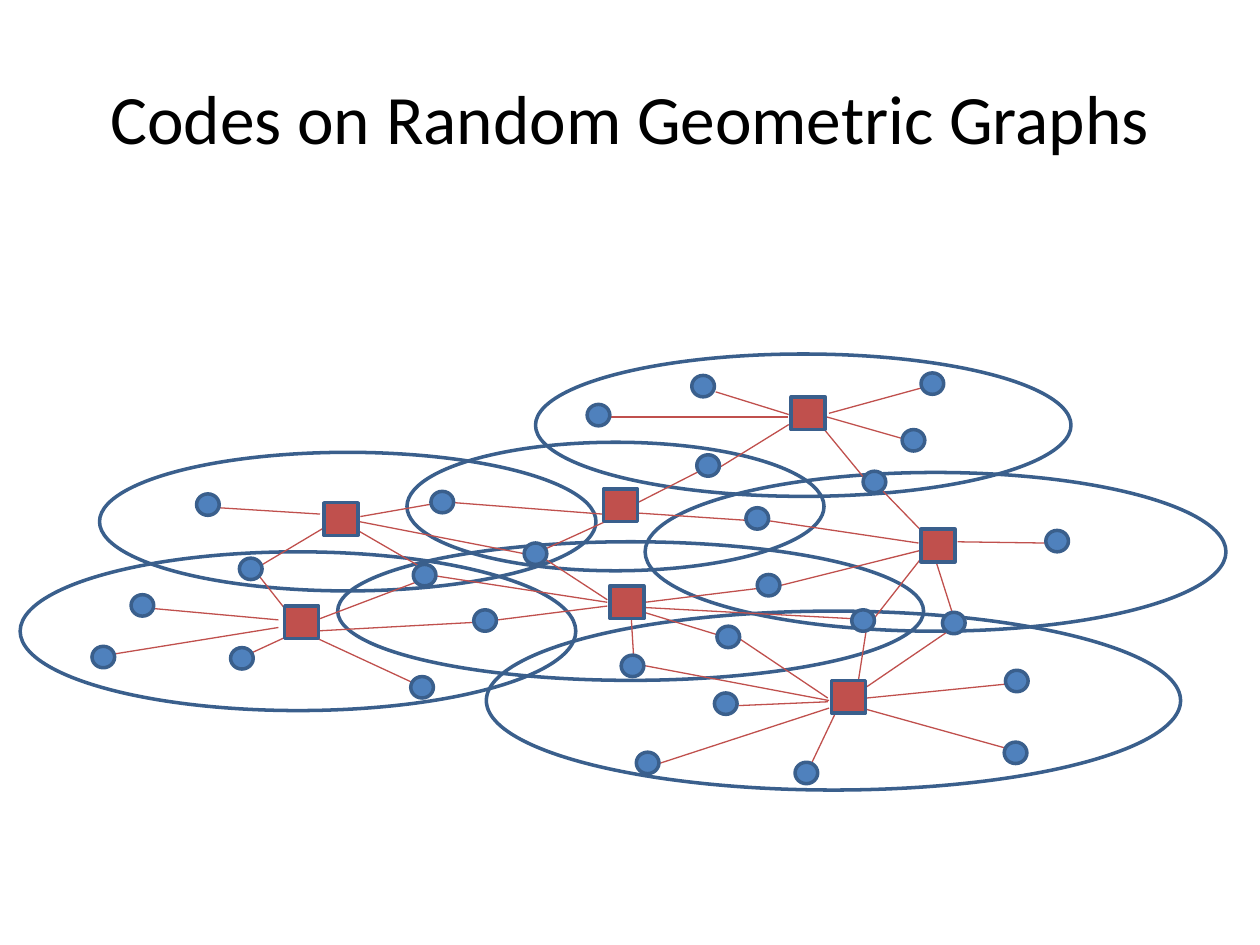
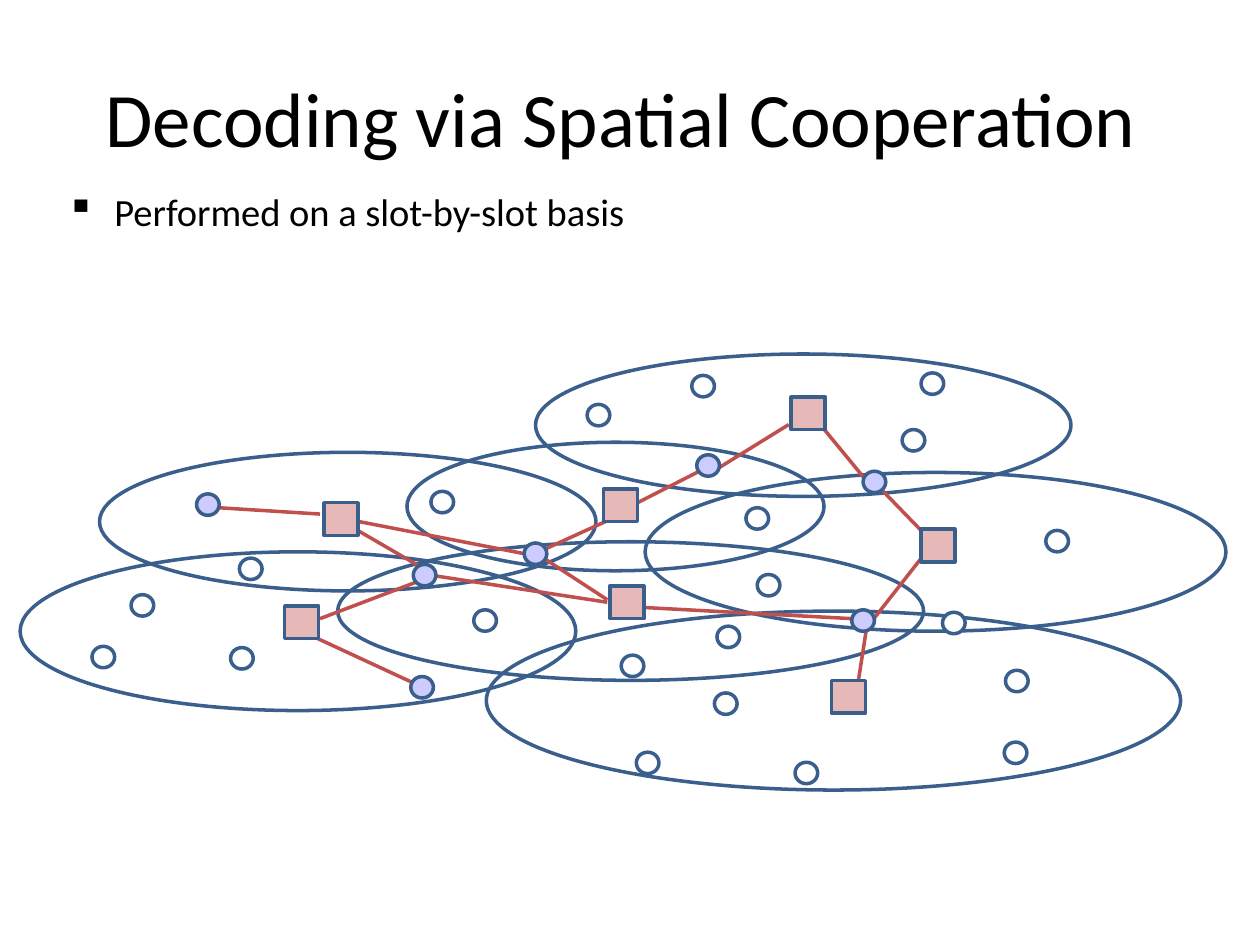
import pptx
import pptx.util
import pptx.dml.color
import pptx.enum.shapes
import pptx.enum.text
from lxml import etree
from pptx.oxml.ns import qn
from pptx.util import Inches, Pt

RGBColor = pptx.dml.color.RGBColor
MSO_SHAPE = pptx.enum.shapes.MSO_SHAPE

# Shared look
BLACK = RGBColor(0x00, 0x00, 0x00)
WHITE = RGBColor(0xFF, 0xFF, 0xFF)
OUTLINE = RGBColor(0x3A, 0x5F, 0x8C)
RED = RGBColor(0xC0, 0x50, 0x4D)
PALE_RED = RGBColor(0xE6, 0xB9, 0xB8)
BLUE = RGBColor(0x4F, 0x81, 0xBD)
LILAC = RGBColor(0xCC, 0xCC, 0xFF)
FONT = "Calibri"
THICK, THIN = 2, 0.75

# Coverage regions: left, top, width, height
REGIONS = [
    (0.79, 3.59, 3.94, 1.1), (2.68, 4.3, 4.65, 1.1), (3.23, 3.51, 3.31, 1.02),
    (5.12, 3.75, 4.61, 1.26), (0.16, 4.38, 4.41, 1.26), (4.25, 2.81, 4.25, 1.13),
    (3.86, 4.85, 5.51, 1.42),
]

# Stations (squares) and users (dots): left, top
STATION_SIZE = (0.27, 0.26)
STATIONS = [
    (2.26, 4.81), (2.57, 3.99), (4.79, 3.88), (6.28, 3.15),
    (7.31, 4.2), (6.6, 5.4), (4.84, 4.65),
]
USER_SIZE = (0.18, 0.17)
COOPERATING_USERS = [
    (6.85, 3.74), (5.53, 3.61), (4.16, 4.31), (3.28, 4.48),
    (6.76, 4.84), (3.26, 5.37), (1.56, 3.92),
]
OTHER_USERS = [
    (5.49, 2.98), (7.31, 2.96), (7.16, 3.41), (8.3, 4.21), (5.92, 4.03),
    (4.66, 3.21), (3.42, 3.9), (3.76, 4.84), (6.01, 4.56), (7.48, 4.86),
    (7.98, 5.32), (7.97, 5.89), (6.31, 6.05), (5.05, 5.97), (5.67, 5.5),
    (4.93, 5.2), (5.69, 4.97), (1.83, 5.14), (0.73, 5.13), (1.9, 4.43),
    (1.04, 4.72),
]

# Links between users and stations: x1, y1, x2, y2
COOPERATION_LINKS = [
    (2.46, 5.04, 3.28, 5.42), (2.54, 4.91, 3.33, 4.61), (1.74, 4.03, 2.54, 4.08),
    (2.77, 4.17, 3.34, 4.5), (2.8, 4.13, 4.19, 4.4), (4.3, 4.37, 4.87, 4.11),
    (5.06, 3.99, 5.57, 3.73), (5.71, 3.71, 6.26, 3.37), (6.88, 3.82, 6.51, 3.37),
    (7.32, 4.22, 7, 3.89), (7.32, 4.42, 6.92, 4.93), (4.33, 4.44, 4.82, 4.76),
    (6.76, 4.91, 5.08, 4.82), (3.45, 4.57, 4.82, 4.78), (6.88, 4.97, 6.81, 5.42),
]
OTHER_LINKS = [
    (2, 5.18, 2.26, 5.06), (0.91, 5.19, 2.21, 4.98), (1.22, 4.83, 2.21, 4.92),
    (2.04, 4.55, 2.26, 4.83), (2.47, 5.01, 3.76, 4.94), (2.05, 4.5, 2.57, 4.19),
    (2.86, 4.1, 3.43, 4), (3.61, 3.99, 4.78, 4.08), (5.03, 4.07, 5.93, 4.13),
    (4.83, 3.31, 6.25, 3.31), (5.68, 3.11, 6.26, 3.29), (7.16, 3.48, 6.53, 3.3),
    (8.3, 4.31, 7.6, 4.3), (7.43, 4.46, 7.57, 4.9), (7.3, 4.37, 6.18, 4.65),
    (7.29, 4.31, 6.08, 4.13), (3.95, 4.92, 4.82, 4.81), (5.08, 4.85, 5.7, 5.04),
    (5.01, 4.9, 5.03, 5.23), (6.02, 4.67, 5.12, 4.78), (5.87, 5.07, 6.57, 5.54),
    (5.86, 5.6, 6.57, 5.57), (6.44, 6.06, 6.64, 5.64), (5.23, 6.06, 6.58, 5.62),
    (5.1, 5.28, 6.58, 5.56), (7.54, 5, 6.88, 5.45), (7.98, 5.43, 6.88, 5.54),
    (7.99, 5.94, 6.84, 5.62), (7.31, 3.08, 6.58, 3.28),
]


def add_outlined(slide, kind, box, fill=None):
    outlined = slide.shapes.add_shape(kind, *map(Inches, box))
    outlined.shadow.inherit = False
    if fill is None:
        outlined.fill.background()
    else:
        outlined.fill.solid()
        outlined.fill.fore_color.rgb = fill
    outlined.line.color.rgb = OUTLINE
    outlined.line.width = Pt(THICK)


def add_link(slide, ends, width):
    link = slide.shapes.add_connector(
        pptx.enum.shapes.MSO_CONNECTOR.STRAIGHT, *map(Inches, ends))
    link.line.color.rgb = RED
    link.line.width = Pt(width)
    etree.SubElement(link._element.spPr, qn("a:effectLst"))


def add_text(slide, box, text, size):
    text_frame = slide.shapes.add_textbox(*map(Inches, box)).text_frame
    text_frame.word_wrap = True
    paragraph = text_frame.paragraphs[0]
    paragraph.text = text
    paragraph.font.name = FONT
    paragraph.font.size = Pt(size)
    paragraph.font.color.rgb = BLACK
    return text_frame


def add_title(slide, text, size):
    title = add_text(slide, (0.5, 0.3, 9, 1.25), text, size)
    title.vertical_anchor = pptx.enum.text.MSO_ANCHOR.MIDDLE
    title.paragraphs[0].alignment = pptx.enum.text.PP_ALIGN.CENTER


def add_bullet(slide, box, text, size):
    paragraph = add_text(slide, box, text, size).paragraphs[0]
    properties = paragraph._p.get_or_add_pPr()
    properties.set("marL", str(Inches(0.38)))
    properties.set("indent", str(-Inches(0.38)))
    bullet = etree.Element(qn("a:buChar"), char="▪")
    properties.insert(0, bullet)


def add_graph(slide, links, link_width, station_fill, cooperating_fill, other_fill):
    for region in REGIONS:
        add_outlined(slide, MSO_SHAPE.OVAL, region)
    for ends in links:
        add_link(slide, ends, link_width)
    for corner in STATIONS:
        add_outlined(slide, MSO_SHAPE.RECTANGLE, corner + STATION_SIZE, station_fill)
    for users, fill in ((OTHER_USERS, other_fill), (COOPERATING_USERS, cooperating_fill)):
        for corner in users:
            add_outlined(slide, MSO_SHAPE.OVAL, corner + USER_SIZE, fill)


def main():
    deck = pptx.Presentation()
    deck.slide_width, deck.slide_height = Inches(10), Inches(7.5)
    blank = deck.slide_layouts[6]

    # Full graph
    codes = deck.slides.add_slide(blank)
    add_title(codes, "Codes on Random Geometric Graphs", 39.6)
    add_graph(codes, COOPERATION_LINKS + OTHER_LINKS, THIN, RED, BLUE, BLUE)

    # Cooperating part of the graph
    decoding = deck.slides.add_slide(blank)
    add_title(decoding, "Decoding via Spatial Cooperation ", 44)
    add_graph(decoding, COOPERATION_LINKS, THICK, PALE_RED, LILAC, WHITE)
    add_bullet(decoding, (0.43, 1.44, 8.65, 0.47), "Performed on a slot-by-slot basis", 22)

    deck.save("out.pptx")


if __name__ == "__main__":
    main()
